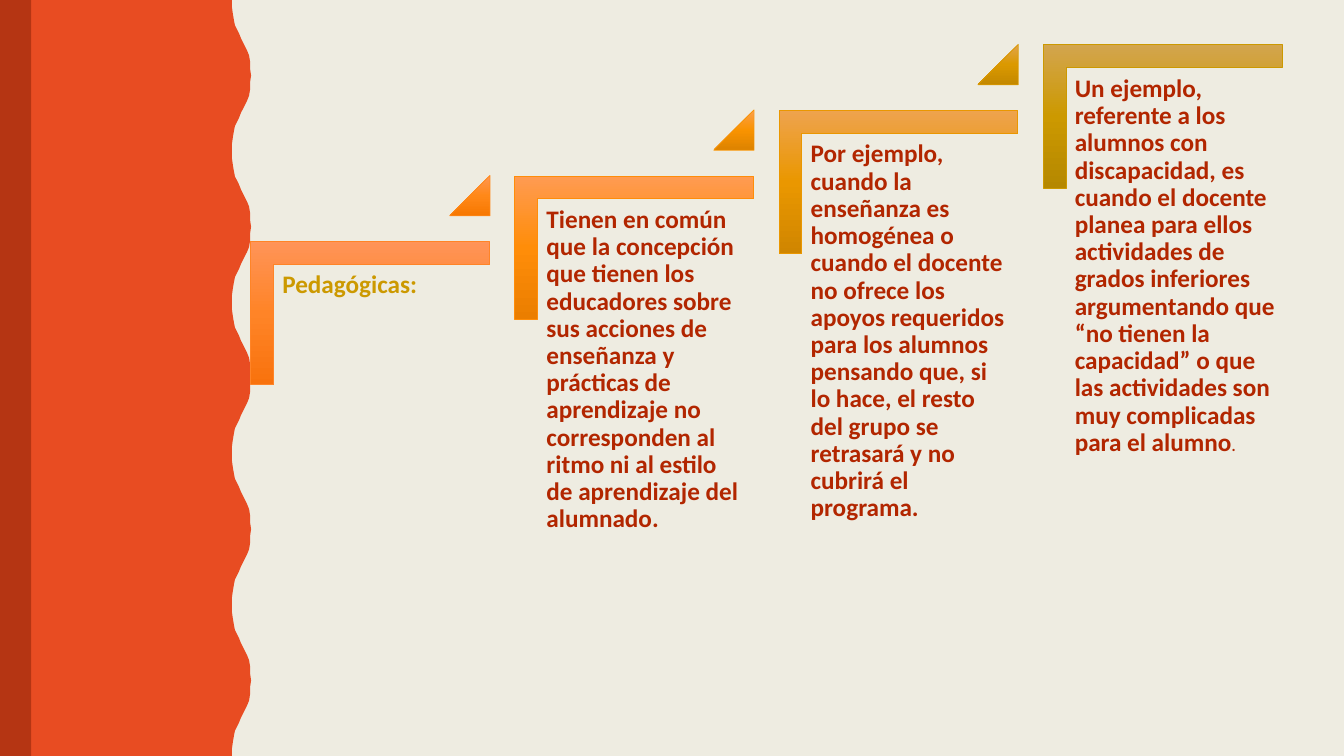
from lxml import etree
from pptx import Presentation
from pptx.dml.color import RGBColor
from pptx.enum import shapes, text
from pptx.oxml import ns
from pptx.util import Inches, Pt

WAVE_X = [2.3, 2.3, 2.31, 2.32, 2.33, 2.35, 2.37, 2.39, 2.41, 2.43, 2.45, 2.47, 2.48, 2.48, 2.49]
WAVE_Y = [0, 0.07, 0.14, 0.2, 0.25, 0.29, 0.33, 0.38, 0.42, 0.46, 0.5, 0.55, 0.61, 0.68, 0.75]
WAVE_PERIOD = 1.5
WAVE_COUNT = 5

STEP_RIGHT = 2.62
STEP_UP = 0.65

GOLD = "CC9900"
RED = "B22600"

STEPS = [
    ([("Pedagógicas:", 18)], GOLD, ["FF9458", "FF8427", "F8720D"]),
    ([("Tienen en común que la concepción que tienen los educadores sobre sus acciones "
       "de enseñanza y prácticas de aprendizaje no corresponden al ritmo ni al estilo "
       "de aprendizaje del alumnado.", 18)], RED, ["FF9B52", "FF8D09", "EB7E00"]),
    ([("Por ejemplo, cuando la enseñanza es homogénea o cuando el docente no ofrece los "
       "apoyos requeridos para los alumnos pensando que, si lo hace, el resto del grupo "
       "se retrasará y no cubrirá el programa.", 18)], RED, ["EEA34E", "EA9700", "D08600"]),
    ([("Un ejemplo, referente a los alumnos con discapacidad, es cuando el docente planea "
       "para ellos actividades de grados inferiores argumentando que “no tienen la "
       "capacidad” o que las actividades son muy complicadas para el alumno", 18),
      (".", 11)], RED, ["D3A54E", "CC9900", "B58800"]),
]
TRIANGLES = [
    ["FF9754", "FF8818", "F77801"],
    ["FCA04F", "F99300", "DD8300"],
    ["E0A44E", "DB9900", "C38800"],
]


def color(value):
    return RGBColor.from_string(value)


class SlideBuilder:
    font = "Calibri"
    line_width = 0.5
    inset = 0.07

    def __init__(self, slide):
        self.slide = slide
        self.group = None

    def background(self, fill):
        self.slide.background.fill.solid()
        self.slide.background.fill.fore_color.rgb = color(fill)

    def start_group(self):
        self.group = self.slide.shapes.add_group_shape()

    def solid(self, shape, fill):
        shape.shadow.inherit = False
        shape.fill.solid()
        shape.fill.fore_color.rgb = color(fill)
        shape.line.fill.background()

    def rectangle(self, left, top, width, height, fill):
        shape = self.slide.shapes.add_shape(
            shapes.MSO_SHAPE.RECTANGLE, Inches(left), Inches(top), Inches(width), Inches(height))
        self.solid(shape, fill)

    def outline(self, points, fill):
        corners = [(Inches(x), Inches(y)) for x, y in points]
        builder = self.slide.shapes.build_freeform(*corners[0])
        builder.add_line_segments(corners[1:], close=True)
        self.solid(builder.convert_to_shape(), fill)

    def gradient_shape(self, kind, left, top, width, height, adjustments, stops, rotation=0):
        shape = self.group.shapes.add_shape(
            kind, Inches(left), Inches(top), Inches(width), Inches(height))
        shape.rotation = rotation
        for index, value in enumerate(adjustments):
            shape.adjustments[index] = value
        shape.shadow.inherit = False
        shape.fill.gradient()
        shape.fill.gradient_angle = 270
        gradient = shape.element.spPr.find(ns.qn("a:gradFill"))
        gradient.set("rotWithShape", "0")
        stop_list = gradient.find(ns.qn("a:gsLst"))
        for old_stop in list(stop_list):
            stop_list.remove(old_stop)
        for position, value in zip((0, 50000, 100000), stops):
            stop = etree.SubElement(stop_list, ns.qn("a:gs"), pos=str(position))
            etree.SubElement(stop, ns.qn("a:srgbClr"), val=value)
        shape.line.color.rgb = color(stops[1])
        shape.line.width = Pt(self.line_width)

    def text_box(self, left, top, width, height, runs, font_color):
        box = self.group.shapes.add_textbox(
            Inches(left), Inches(top), Inches(width), Inches(height))
        frame = box.text_frame
        frame.word_wrap = True
        frame.vertical_anchor = text.MSO_ANCHOR.TOP
        frame.margin_left = frame.margin_right = Inches(self.inset)
        frame.margin_top = frame.margin_bottom = Inches(self.inset)
        paragraph = frame.paragraphs[0]
        paragraph.line_spacing = 0.9
        for words, size in runs:
            run = paragraph.add_run()
            run.text = words
            run.font.name = self.font
            run.font.size = Pt(size)
            run.font.bold = True
            run.font.color.rgb = color(font_color)


def wave_points():
    half = list(zip(WAVE_X, WAVE_Y))
    period = half + [(x, WAVE_PERIOD - y) for x, y in reversed(half[1:-1])]
    points = [(0, 0)]
    for index in range(WAVE_COUNT):
        points += [(x, y + index * WAVE_PERIOD) for x, y in period]
    bottom = WAVE_COUNT * WAVE_PERIOD
    return points + [(WAVE_X[0], bottom), (0, bottom)]


def main():
    presentation = Presentation()
    presentation.slide_width = Inches(13.33)
    presentation.slide_height = Inches(7.5)
    builder = SlideBuilder(presentation.slides.add_slide(presentation.slide_layouts[6]))

    builder.background("EEECE1")
    builder.outline(wave_points(), "E84C22")
    builder.rectangle(0, 0, 0.31, 7.5, "B53513")

    builder.start_group()
    for index, (runs, font_color, stops) in enumerate(STEPS):
        right, up = index * STEP_RIGHT, index * STEP_UP
        builder.gradient_shape(shapes.MSO_SHAPE.CORNER, 2.96 + right, 1.92 - up, 1.42, 2.37,
                               [0.16, 0.16], stops, rotation=90)
        builder.text_box(2.73 + right, 2.63 - up, 2.14, 1.88, runs, font_color)
        if index < len(TRIANGLES):
            builder.gradient_shape(shapes.MSO_SHAPE.ISOSCELES_TRIANGLE, 4.46 + right, 1.74 - up,
                                   0.4, 0.4, [1], TRIANGLES[index])

    presentation.save("out.pptx")


if __name__ == "__main__":
    main()
